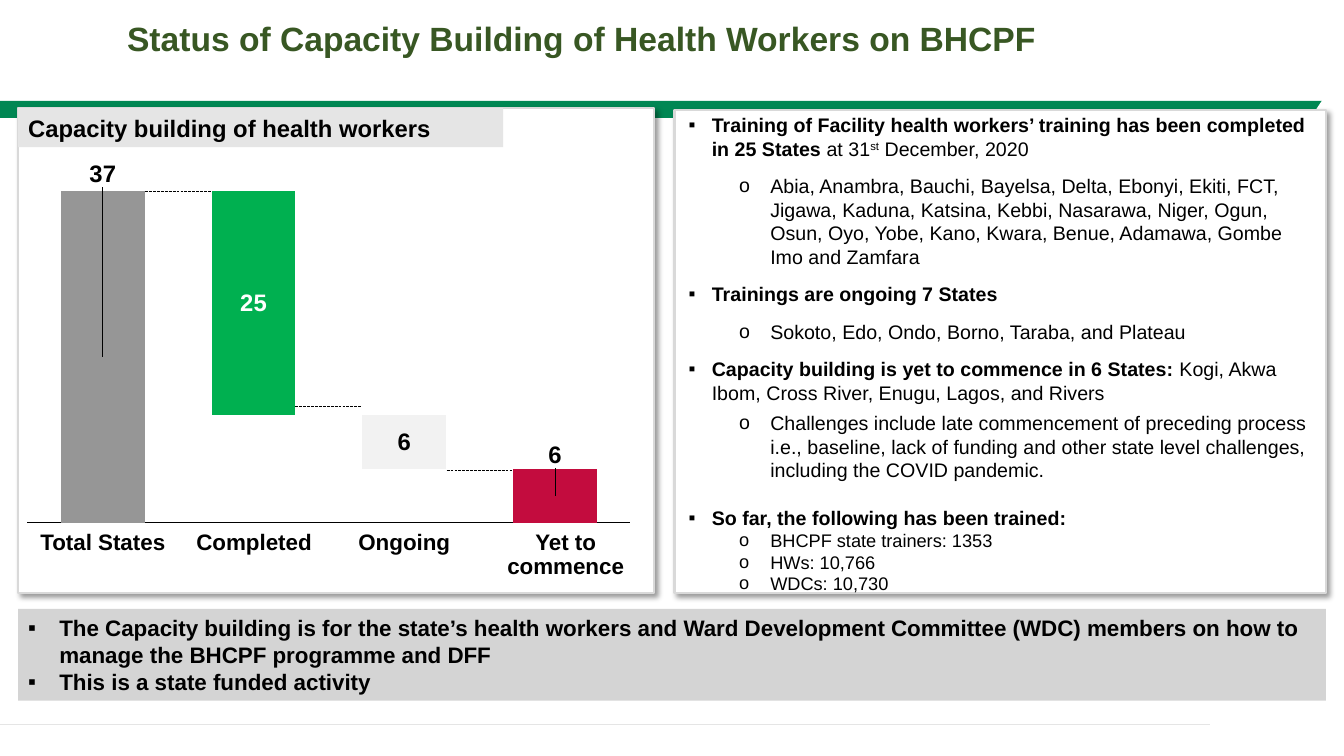
"""Build the slide on capacity building of health workers."""
from typing import NamedTuple

from lxml import etree
from pptx import Presentation
from pptx.chart.data import CategoryChartData
from pptx.dml.color import RGBColor
from pptx.enum.chart import XL_CHART_TYPE, XL_TICK_LABEL_POSITION, XL_TICK_MARK
from pptx.enum.dml import MSO_LINE
from pptx.enum.shapes import MSO_CONNECTOR, MSO_SHAPE
from pptx.enum.text import MSO_ANCHOR, MSO_AUTO_SIZE, PP_ALIGN
from pptx.oxml import parse_xml
from pptx.oxml.ns import nsdecls, qn
from pptx.util import Emu, Pt

PX = 9144
RECTANGLE, TRIANGLE = MSO_SHAPE.RECTANGLE, MSO_SHAPE.ISOSCELES_TRIANGLE
LEFT, CENTER = PP_ALIGN.LEFT, PP_ALIGN.CENTER
TOP, MIDDLE = MSO_ANCHOR.TOP, MSO_ANCHOR.MIDDLE
NO_TICKS, NO_LABELS = XL_TICK_MARK.NONE, XL_TICK_LABEL_POSITION.NONE

BLACK = RGBColor(0x00, 0x00, 0x00)
WHITE = RGBColor(0xFF, 0xFF, 0xFF)
BAND_GREEN = RGBColor(0x00, 0x87, 0x53)
TITLE_GREEN = RGBColor(0x38, 0x57, 0x23)
BAR_GREEN = RGBColor(0x00, 0xB0, 0x50)
BAR_GREY = RGBColor(0x96, 0x96, 0x96)
BAR_PALE = RGBColor(0xF2, 0xF2, 0xF2)
BAR_RED = RGBColor(0xC3, 0x0C, 0x3E)
PANEL_EDGE = RGBColor(0xD9, 0xD9, 0xD9)
HEADER_GREY = RGBColor(0xE5, 0xE5, 0xE5)
SUMMARY_GREY = RGBColor(0xD4, 0xD4, 0xD4)


class Frame(NamedTuple):
    """Place and size in px."""
    left: int
    top: int
    width: int
    height: int


class Span(NamedTuple):
    """A stretch of text in one format."""
    text: str
    bold: bool = False
    baseline: int = 0


class Item(NamedTuple):
    """A bulleted paragraph."""
    spans: list[Span]
    level: int = 0
    before: int = 0
    after: int = 0
    size: int = 14


class BarLabel(NamedTuple):
    """Colours and label shift of one bar."""
    series: int
    point: int
    fill: RGBColor
    text: RGBColor = BLACK
    shift: float = 0


PANELS = [Frame(18, 107, 631, 481), Frame(669, 109, 646, 479)]
CATEGORIES = [("Total States", 102), ("Completed", 252),
              ("Ongoing", 401), ("Yet to commence", 561)]
STEPS = [(144, 190), (293, 403), (443, 466)]
BARS = [BarLabel(0, 0, BAR_GREY, shift=-0.49), BarLabel(0, 3, BAR_RED, shift=-0.11),
        BarLabel(1, 1, BAR_GREEN, WHITE), BarLabel(1, 2, BAR_PALE)]
DETAILS = [
    Item([Span("Training of Facility health workers’ training has been completed in 25 States ", True),
          Span("at 31"), Span("st", baseline=30000), Span(" December, 2020")], after=5),
    Item([Span("Abia, Anambra, Bauchi, Bayelsa, Delta, Ebonyi, Ekiti, FCT, Jigawa, Kaduna, Katsina, "
               "Kebbi, Nasarawa, Niger, Ogun, Osun, Oyo, Yobe, Kano, Kwara, Benue, Adamawa, Gombe "
               "Imo and Zamfara")], 1, 5, 5),
    Item([Span("Trainings are ongoing 7 States", True)], 0, 5, 5),
    Item([Span("Sokoto, Edo, Ondo, Borno, Taraba, and Plateau")], 1, 5, 5),
    Item([Span("Capacity building is yet to commence in 6 States: ", True),
          Span("Kogi, Akwa Ibom, Cross River, Enugu, Lagos, and Rivers")], 0, 5, 5),
    Item([Span("Challenges include late commencement of preceding process i.e., baseline, lack of "
               "funding and other state level challenges, including the COVID pandemic.")], 1),
    Item([Span("So far, the following has been trained:", True)], before=17),
    *[Item([Span(text)], 1, size=13)
      for text in ("BHCPF state trainers: 1353", "HWs: 10,766", "WDCs: 10,730")],
]
SUMMARY = [
    Item([Span("The Capacity building is for the state’s health workers and Ward Development Committee "
               "(WDC) members on how to manage the BHCPF programme and DFF", True)], size=16),
    Item([Span("This is a state funded activity", True)], size=16),
]


def place(frame: Frame) -> list[Emu]:
    """Turn a frame in px into EMU."""
    return [Emu(length * PX) for length in frame]


def format_font(font, size: int, color: RGBColor = BLACK, bold: bool = True) -> None:
    """Set face, size, colour and weight."""
    font.name, font.size, font.bold = "Arial", Pt(size), bold
    font.color.rgb = color


def add_span(para, text: str, baseline: int = 0, **style) -> None:
    """Add formatted text to a paragraph."""
    span = para.add_run()
    span.text = text
    format_font(span.font, **style)
    if baseline:
        span.font.size = Pt(style["size"])
        span._r.get_or_add_rPr().set("baseline", str(baseline))


def write_line(box, text: str, align=LEFT, spacing: float = 1, anchor=MIDDLE, **style) -> None:
    """Write one line of text into a box."""
    box.text_frame.vertical_anchor = anchor
    para = box.text_frame.paragraphs[0]
    para.alignment, para.line_spacing = align, spacing
    add_span(para, text, **style)


def write_list(box, items: list[Item], indents: list[tuple[int, int]], anchor) -> None:
    """Write bulleted paragraphs into a box."""
    frame = box.text_frame
    frame.word_wrap, frame.auto_size, frame.vertical_anchor = True, MSO_AUTO_SIZE.NONE, anchor
    for index, item in enumerate(items):
        para = frame.add_paragraph() if index else frame.paragraphs[0]
        margin, hanging = indents[item.level]
        properties = para._p.get_or_add_pPr()
        properties.set("marL", str(margin * PX))
        properties.set("indent", str(-hanging * PX))
        etree.SubElement(properties, qn("a:buFont")).set("typeface", "Arial")
        etree.SubElement(properties, qn("a:buChar")).set("char", "▪o"[item.level])
        para.level, para.alignment = item.level, LEFT
        para.space_before, para.space_after = Pt(item.before), Pt(item.after)
        for span in item.spans:
            add_span(para, span.text, span.baseline, size=item.size, bold=span.bold)


def add_block(page, frame: Frame, fill: RGBColor, kind=RECTANGLE):
    """Add a filled shape without outline or shadow."""
    block = page.shapes.add_shape(kind, *place(frame))
    block.shadow.inherit = False
    block.fill.solid()
    block.fill.fore_color.rgb = fill
    block.line.fill.background()
    return block


def add_panel(page, frame: Frame) -> None:
    """Add a white panel with an edge and a soft shadow."""
    panel = add_block(page, frame, WHITE)
    panel.line.color.rgb, panel.line.width = PANEL_EDGE, Pt(1.5)
    effects = panel.element.spPr.find(qn("a:effectLst"))
    effects.append(parse_xml(
        f'<a:outerShdw {nsdecls("a")} blurRad="{Pt(4)}" dist="{Pt(3)}" dir="2700000" algn="tl" '
        'rotWithShape="0"><a:srgbClr val="000000"><a:alpha val="40000"/></a:srgbClr></a:outerShdw>'))


def add_line(page, left: int, right: int, top: int, color: RGBColor, width: float, dash=None) -> None:
    """Add a level line."""
    ends = place(Frame(left, top, right, top))
    line = page.shapes.add_connector(MSO_CONNECTOR.STRAIGHT, *ends)
    line.line.color.rgb, line.line.width = color, Pt(width)
    if dash:
        line.line.dash_style = dash
    etree.SubElement(line.element.spPr, qn("a:effectLst"))


def manual_layout(body: str):
    """Make a chart layout element."""
    return parse_xml(f'<c:layout {nsdecls("c")}><c:manualLayout>{body}</c:manualLayout></c:layout>')


def add_waterfall(page) -> None:
    """Add the stacked columns that step down from all states."""
    data = CategoryChartData()
    data.categories = ["1", "2", "3", "4"]
    data.add_series("Series 1", (37, 12, 6, 6))
    data.add_series("Series 2", (None, 25, 6, None))
    chart = page.shapes.add_chart(
        XL_CHART_TYPE.COLUMN_STACKED, *place(Frame(18, 157, 616, 371)), data).chart
    chart.has_legend = chart.has_title = False
    chart.font.name, chart.font.size, chart.font.color.rgb = "Calibri", Pt(10), BLACK
    values, names = chart.value_axis, chart.category_axis
    values.minimum_scale, values.maximum_scale = 0, 37
    values.has_major_gridlines = values.visible = False
    names.tick_label_position, names.major_tick_mark = NO_LABELS, NO_TICKS
    names.format.line.color.rgb, names.format.line.width = BLACK, Pt(0.75)
    plot = chart.plots[0]
    plot.gap_width, plot.overlap, plot.vary_by_categories = 80, 100, False
    for series in plot.series:
        series.data_labels.show_value = False
    plot.series[0].format.fill.background()
    plot.series[1].format.fill.solid()
    plot.series[1].format.fill.fore_color.rgb = BAR_GREEN
    for bar in BARS:
        series = plot.series[bar.series]
        point = series.points[bar.point]
        point.format.fill.solid()
        point.format.fill.fore_color.rgb = bar.fill
        format_font(point.data_label.font, 17, bar.text)
        if bar.shift:
            label = series._element.xpath(f'c:dLbls/c:dLbl[c:idx/@val="{bar.point}"]')[0]
            label.insert(1, manual_layout(f'<c:x val="0"/><c:y val="{bar.shift}"/>'))
    plot.series[0]._element.find(qn("c:dLbls")).append(parse_xml(
        f'<c:extLst {nsdecls("c")}><c:ext uri="{{CE6537A1-D6FC-4f65-9D91-7224C49458BB}}" '
        'xmlns:c15="http://schemas.microsoft.com/office/drawing/2012/chart">'
        '<c15:showLeaderLines val="1"/></c:ext></c:extLst>'))
    area = chart._chartSpace.chart.plotArea
    for layout in area.findall(qn("c:layout")):
        area.remove(layout)
    area.insert(0, manual_layout(
        '<c:layoutTarget val="inner"/><c:xMode val="edge"/><c:yMode val="edge"/>'
        '<c:x val="0.015"/><c:y val="0.088"/><c:w val="0.971"/><c:h val="0.887"/>'))


def main() -> None:
    """Build and save the deck."""
    deck = Presentation()
    deck.slide_width, deck.slide_height = Emu(1333 * PX), Emu(750 * PX)
    page = deck.slides.add_slide(deck.slide_layouts[1])
    title, details = page.placeholders
    add_block(page, Frame(0, 100, 1311, 17), BAND_GREEN)
    add_block(page, Frame(1297, 100, 28, 21), WHITE, TRIANGLE)
    add_line(page, 0, 1200, 719, HEADER_GREY, 1)
    for frame in PANELS:
        add_panel(page, frame)
    header = add_block(page, Frame(18, 107, 481, 39), HEADER_GREY)
    write_line(header, "Capacity building of health workers", size=17)
    for left, top in STEPS:
        add_line(page, left, left + 66, top, BLACK, 0.25, MSO_LINE.LONG_DASH)
    add_waterfall(page)
    for name, middle in CATEGORIES:
        box = page.shapes.add_textbox(*place(Frame(middle - 91, 527, 182, 26)))
        frame = box.text_frame
        frame.margin_left = frame.margin_right = frame.margin_top = frame.margin_bottom = 0
        write_line(box, name, CENTER, 0.9, TOP, size=16)
    for holder, frame in ((title, Frame(116, 17, 1105, 62)), (details, Frame(673, 107, 642, 497))):
        holder.left, holder.top, holder.width, holder.height = place(frame)
        holder.element.getparent().append(holder.element)
    write_line(title, "Status of Capacity Building of Health Workers on BHCPF",
               LEFT, 0.9, TOP, size=24, color=TITLE_GREEN)
    write_list(details, DETAILS, [(23, 23), (81, 31)], TOP)
    summary = add_block(page, Frame(18, 604, 1297, 91), SUMMARY_GREY)
    write_list(summary, SUMMARY, [(31, 31)], MIDDLE)
    deck.save("out.pptx")


if __name__ == "__main__":
    main()
